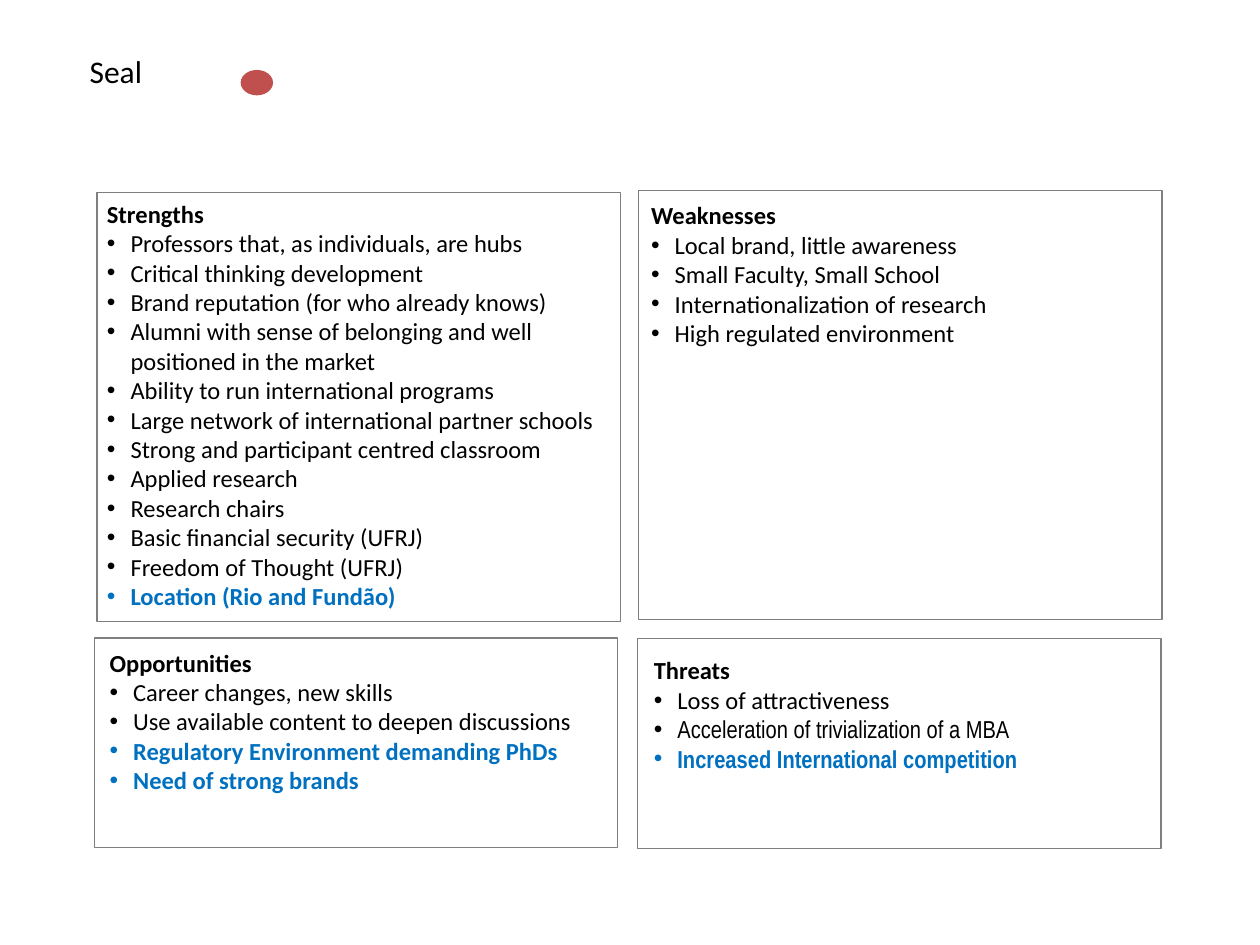
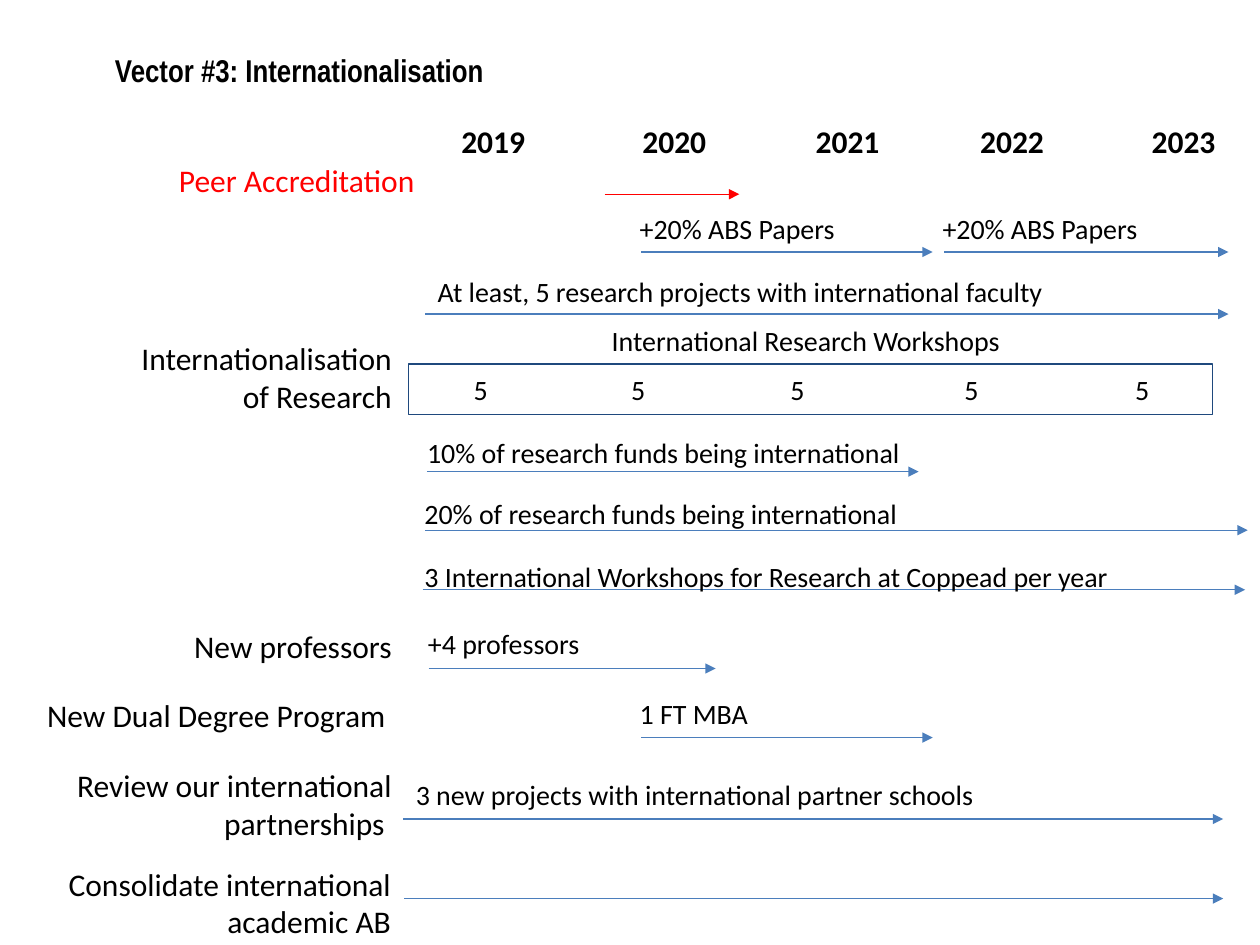
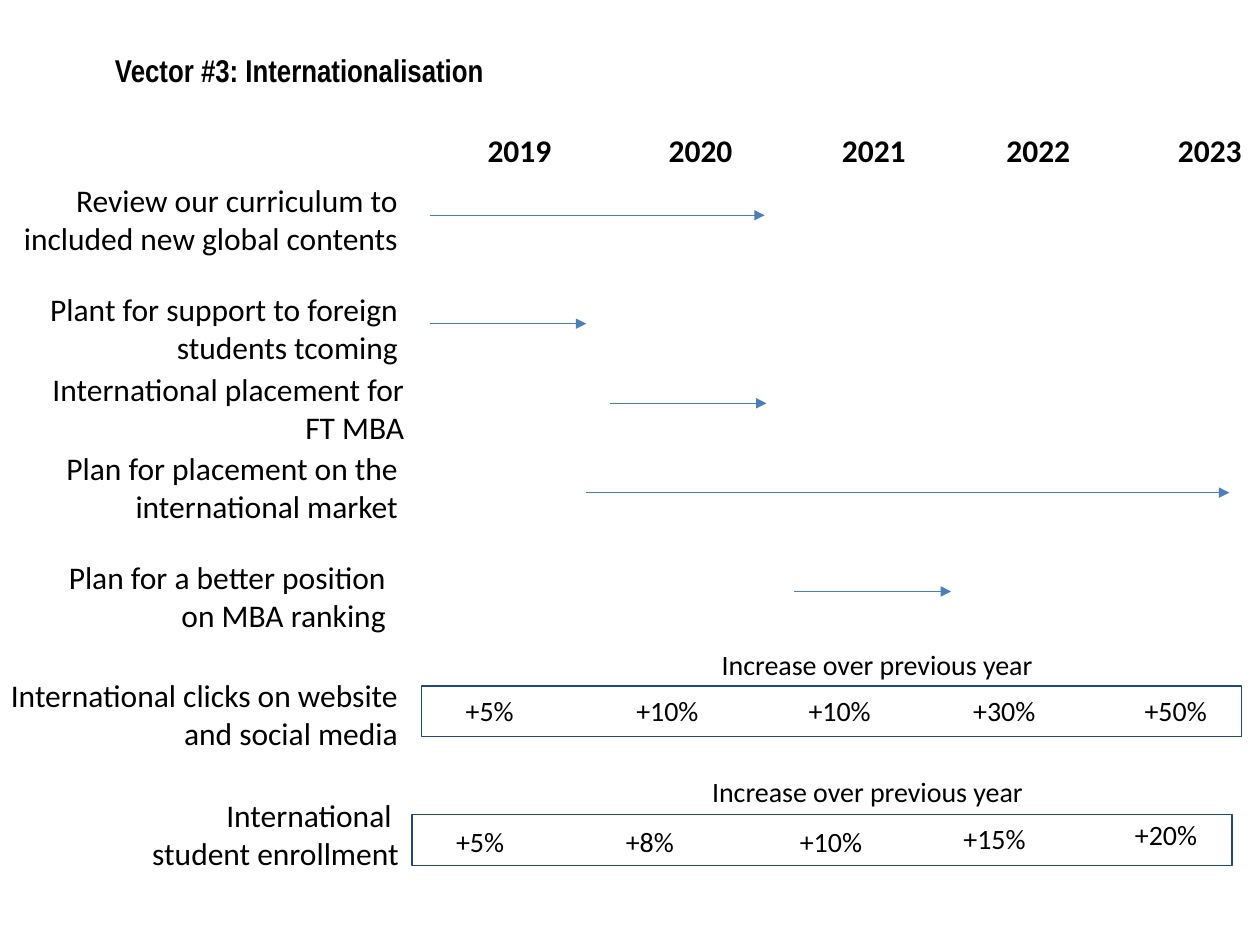
"""Build a SWOT slide and two internationalisation roadmap slides."""
from lxml.etree import SubElement
from pptx import Presentation
from pptx.dml.color import RGBColor
from pptx.enum.shapes import MSO_CONNECTOR, MSO_SHAPE
from pptx.enum.text import MSO_ANCHOR, MSO_AUTO_SIZE, PP_ALIGN
from pptx.oxml.ns import qn
from pptx.util import Pt

COLORS = {"text": "000000", "highlight": "0070C0", "frame": "7F7F7F", "seal": "C0504D",
          "arrow": "4B7EBC", "alert": "FF0000", "band": "1F497D"}
BODY_FONT, NARROW_FONT = "Calibri", "Arial Narrow"
BOX_HEIGHTS = {(16, 1): 26.5, (18, 1): 29, (18, 2): 51}
FRAME_WIDTH = 299
BAND_HEIGHT = 29

QUADRANTS = [
    {"title": "Strengths", "frame": (55.5, 110, 245), "box": (54, 110, 312, 262),
     "items": ["Professors that, as individuals, are hubs", "Critical thinking development",
               "Brand reputation (for who already knows)",
               "Alumni with sense of belonging and well positioned in the market",
               "Ability to run international programs",
               "Large network of international partner schools",
               "Strong and participant centred classroom", "Applied research",
               "Research chairs", "Basic financial security (UFRJ)",
               "Freedom of Thought (UFRJ)"],
     "highlights": ["Location (Rio and Fundão)"]},
    {"title": "Weaknesses", "frame": (365, 109, 245), "box": (365, 111, 299, 109),
     "items": ["Local brand, little awareness", "Small Faculty, Small School",
               "Internationalization of research", "High regulated environment"],
     "highlights": []},
    {"title": "Opportunities", "frame": (54, 364.5, 120), "box": (55.5, 366.5, 312, 92),
     "items": ["Career changes, new skills", "Use available content to deepen discussions"],
     "highlights": ["Regulatory Environment demanding PhDs", "Need of strong brands"]},
    {"title": "Threats", "frame": (364.5, 365, 120), "box": (366.5, 371, 297.5, 75),
     "items": ["Loss of attractiveness", "Acceleration of trivialization of a MBA"],
     "highlights": ["Increased International competition"]},
]
NARROW_ITEMS = {"Acceleration of trivialization of a MBA", "Increased International competition"}

YEARS = ["2019", "2020", "2021", "2022", "2023"]
YEAR_OFFSETS = [0, 103.5, 202.5, 296.5, 394.5]
ROADMAP_TITLE = "Vector #3: Internationalisation"
ROADMAPS = [
    {"years_at": (256.5, 66),
     "labels": [
         (["Peer Accreditation"], 6.5, 88.5, 237.5, 1, "alert"),
         (["Internationalisation of Research"], 61, 190, 170, 2, "text"),
         (["New professors"], -2, 355, 233, 1, "text"),
         (["New Dual Degree Program"], 0, 394, 227.5, 1, "text"),
         (["Review our international partnerships "], 6.5, 434, 224.5, 2, "text"),
         (["Consolidate international academic AB"], 16, 490.5, 214.5, 2, "text")],
     "captions": [
         ("+20% ABS Papers", 358.5, 117.5, 127.5), ("+20% ABS Papers", 531.5, 117.5, 145.5),
         ("At least, 5 research projects with international faculty", 243, 153.5, 407.5),
         ("10% of research funds being international", 237, 245.5, 288),
         ("20% of research funds being international", 235.5, 280, 288),
         ("3 International Workshops for Research at Coppead per year", 235.5, 316, 410.5),
         ("+4 professors", 237.5, 354.5, 102), ("1 FT MBA", 358.5, 394.5, 77),
         ("3 new projects with international partner schools", 230.5, 440.5, 337.5)],
     "arrows": [
         (345.5, 422.5, 111, "alert"), (366.5, 533, 144, "arrow"), (539.5, 702, 144, "arrow"),
         (243, 702, 179.5, "arrow"), (244, 525, 269.5, "arrow"), (243, 713, 303, "arrow"),
         (241.5, 711.5, 337, "arrow"), (245, 409, 382, "arrow"), (366.5, 533, 421.5, "arrow"),
         (230.5, 699, 468, "arrow"), (231, 699, 513.5, "arrow")],
     "bands": [
         {"heading": ("International Research Workshops", 232, 181.5, 457),
          "frame": (233.5, 208, 459.5), "values": [
             ("5", 263.5, 209.5), ("5", 353.5, 209.5), ("5", 444.5, 209.5),
             ("5", 544, 209.5), ("5", 641.5, 209.5)]}]},
    {"years_at": (271.5, 71.5),
     "labels": [
         (["Review our curriculum to included new global contents"], -29, 100, 263.5, 2, "text"),
         (["Plant for support to foreign students tcoming"], -29, 162, 263.5, 2, "text"),
         (["International placement for FT MBA"], 20, 208, 218, 2, "text"),
         (["Plan for placement on the international market"], -39.5, 253, 274, 2, "text"),
         (["Plan for a better position on MBA ranking"], 20, 315.5, 207.5, 2, "text"),
         (["International clicks on website and social media"], -6.5, 383, 241, 2, "text"),
         (["International ", "student enrollment"], 78.5, 451.5, 156.5, 2, "text")],
     "captions": [],
     "arrows": [
         (245.5, 437, 123, "arrow"), (245.5, 335, 185, "arrow"), (348.5, 438, 230.5, "arrow"),
         (335, 702.5, 281.5, "arrow"), (453.5, 543.5, 338, "arrow")],
     "bands": [
         {"heading": ("Increase over previous year", 404, 366.5, 194.5),
          "frame": (241, 392, 468.5), "values": [
             ("+5%", 259, 393), ("+10%", 356.5, 393), ("+10%", 455, 393),
             ("+30%", 549, 393), ("+50%", 647, 393)]},
         {"heading": ("Increase over previous year", 398.5, 439, 194.5),
          "frame": (235.5, 465.5, 468.5), "values": [
             ("+5%", 253.5, 467.5), ("+8%", 350.5, 467.5), ("+10%", 450, 467.5),
             ("+15%", 543.5, 466), ("+20%", 641.5, 463.5)]}]},
]
VALUE_WIDTHS = {1: 23, 3: 42.5, 4: 50.5}


def rgb(name):
    return RGBColor.from_string(COLORS[name])


def place(box, left, top, width, height):
    box.left, box.top, box.width, box.height = Pt(left), Pt(top), Pt(width), Pt(height)


def add_span(para, text, size, color="text", bold=False, font=BODY_FONT):
    span = para.add_run()
    span.text = text
    span.font.name, span.font.size, span.font.bold = font, Pt(size), bold
    span.font.color.rgb = rgb(color)


def add_bullet(para):
    properties = para._p.get_or_add_pPr()
    properties.set("marL", str(Pt(13.5)))
    properties.set("indent", str(-Pt(13.5)))
    SubElement(properties, qn("a:buFont"), typeface="Arial")
    SubElement(properties, qn("a:buChar"), char="•")


def add_box(page, left, top, width, height, wrap=True):
    box = page.shapes.add_textbox(Pt(left), Pt(top), Pt(width), Pt(height))
    box.text_frame.word_wrap = wrap
    box.text_frame.auto_size = MSO_AUTO_SIZE.SHAPE_TO_FIT_TEXT
    return box.text_frame


def add_lines(page, lines, left, top, width, size=16, rows=1, color="text",
              bold=False, align=PP_ALIGN.LEFT, wrap=False):
    frame = add_box(page, left, top, width, BOX_HEIGHTS[size, rows], wrap)
    for index, line in enumerate(lines):
        para = frame.add_paragraph() if index else frame.paragraphs[0]
        para.alignment = align
        add_span(para, line, size, color, bold)


def add_title(page, text, left, top, width, align=PP_ALIGN.LEFT, **style):
    title = page.shapes.title
    place(title, left, top, width, BOX_HEIGHTS[18, 1])
    frame = title.text_frame
    frame.word_wrap = True
    frame.vertical_anchor = MSO_ANCHOR.TOP
    frame.auto_size = MSO_AUTO_SIZE.NONE
    para = frame.paragraphs[0]
    para.alignment = align
    add_span(para, text, 18, **style)


def add_outline(page, left, top, width, height, color):
    shape = page.shapes.add_shape(MSO_SHAPE.RECTANGLE, Pt(left), Pt(top), Pt(width), Pt(height))
    shape.shadow.inherit = False
    shape.fill.background()
    shape.line.color.rgb = rgb(color)
    shape.line.width = Pt(0.75)


def add_arrow(page, start, end, top, color):
    arrow = page.shapes.add_connector(MSO_CONNECTOR.STRAIGHT, Pt(start), Pt(top), Pt(end), Pt(top))
    arrow.line.color.rgb = rgb(color)
    arrow.line.width = Pt(0.75)
    SubElement(arrow.line._get_or_add_ln(), qn("a:tailEnd"), type="triangle")
    SubElement(arrow._element.spPr, qn("a:effectLst"))


def add_quadrant(page, quadrant):
    left, top, height = quadrant["frame"]
    add_outline(page, left, top, FRAME_WIDTH, height, "frame")
    frame = add_box(page, *quadrant["box"])
    add_span(frame.paragraphs[0], quadrant["title"], 14, bold=True)
    for item in quadrant["items"] + quadrant["highlights"]:
        para = frame.add_paragraph()
        add_bullet(para)
        marked = item in quadrant["highlights"]
        add_span(para, item, 14, "highlight" if marked else "text", marked,
                 NARROW_FONT if item in NARROW_ITEMS else BODY_FONT)


def add_band(page, band):
    heading, left, top, width = band["heading"]
    add_lines(page, [heading], left, top, width, align=PP_ALIGN.CENTER, wrap=True)
    add_outline(page, *band["frame"], BAND_HEIGHT, "band")
    for value, left, top in band["values"]:
        add_lines(page, [value], left, top, VALUE_WIDTHS[len(value)])


def build_swot(page):
    add_title(page, "Seal", 44, 26, 60)
    seal = page.shapes.add_shape(MSO_SHAPE.OVAL, Pt(137.5), Pt(40), Pt(18.5), Pt(14.5))
    seal.shadow.inherit = False
    seal.fill.solid()
    seal.fill.fore_color.rgb = rgb("seal")
    seal.line.fill.background()
    for quadrant in QUADRANTS:
        add_quadrant(page, quadrant)


def build_roadmap(page, roadmap):
    add_title(page, ROADMAP_TITLE, 58.5, 25.5, 327.5, PP_ALIGN.JUSTIFY,
              bold=True, font=NARROW_FONT)
    first_left, years_top = roadmap["years_at"]
    for year, offset in zip(YEARS, YEAR_OFFSETS):
        add_lines(page, [year], first_left + offset, years_top, 51, size=18, bold=True)
    for lines, left, top, width, rows, color in roadmap["labels"]:
        add_lines(page, lines, left, top, width, 18, rows, color,
                  align=PP_ALIGN.RIGHT, wrap=True)
    for arrow in roadmap["arrows"]:
        add_arrow(page, *arrow)
    for caption, left, top, width in roadmap["captions"]:
        add_lines(page, [caption], left, top, width)
    for band in roadmap["bands"]:
        add_band(page, band)


def main():
    deck = Presentation()
    deck.slide_width, deck.slide_height = Pt(720), Pt(540)
    layout = deck.slide_layouts[5]
    build_swot(deck.slides.add_slide(layout))
    for roadmap in ROADMAPS:
        build_roadmap(deck.slides.add_slide(layout), roadmap)
    deck.save("out.pptx")


if __name__ == "__main__":
    main()
